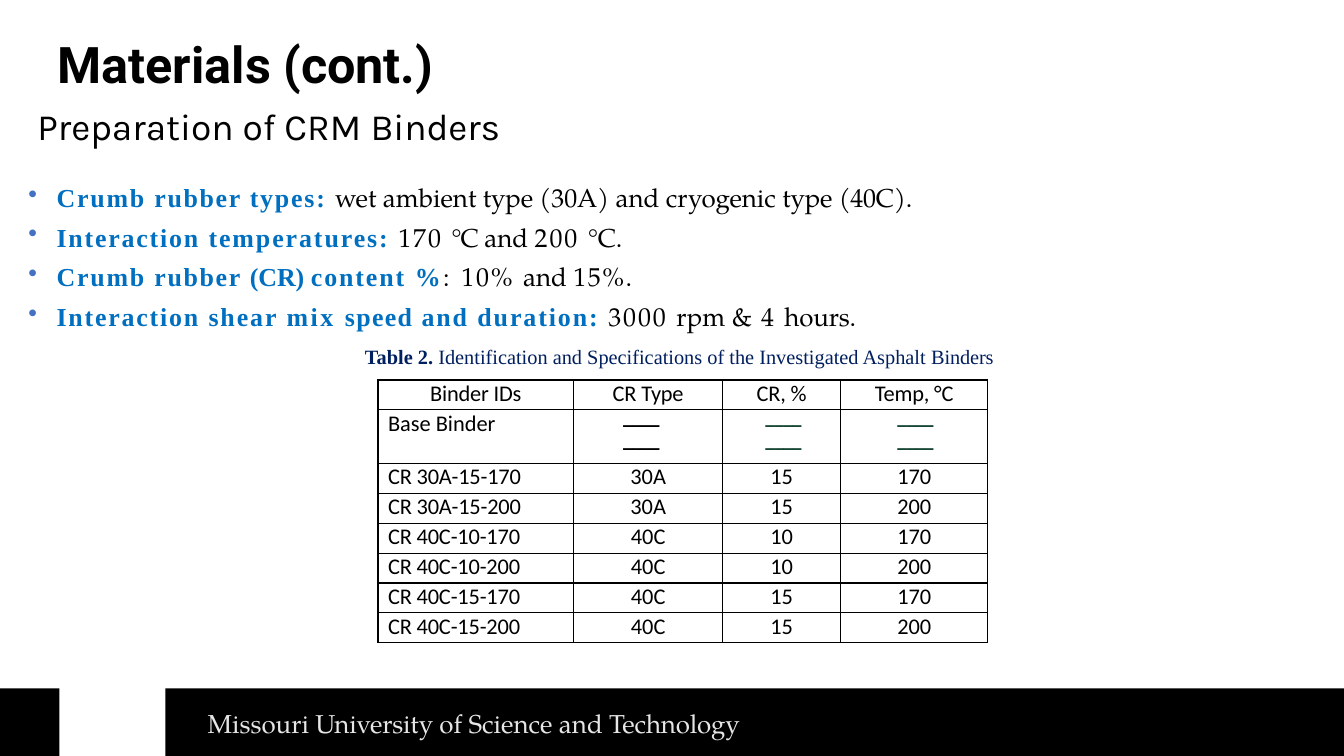
import pptx
import pptx.dml.color
import pptx.enum.shapes
import pptx.enum.text
import pptx.oxml.ns
import pptx.util
from lxml import etree

ALIGN = pptx.enum.text.PP_ALIGN
WIDTH, HEIGHT = pptx.util.Inches(13.33), pptx.util.Inches(7.5)

THEME = {
    "bar": "000000",
    "bullet": "4471C4",
    "rule": "000000",
    "title": {"name": "Roboto", "size": 36, "color": "000000", "bold": True},
    "footer": {"name": "TeX Gyre Pagella", "size": 18.5, "color": "E7E6E6", "bold": False},
    "heading": {"name": "Karla", "size": 26.5, "color": "000000", "bold": False},
    "label": {"name": "Times New Roman", "size": 18.5, "color": "006FC0", "bold": True},
    "value": {"name": "TeX Gyre Pagella", "size": 18.5, "color": "000000", "bold": False},
    "caption_label": {"name": "Times New Roman", "size": 14.5, "color": "001F5F", "bold": True},
    "caption": {"name": "Times New Roman", "size": 14.5, "color": "001F5F", "bold": False},
    "cell": {"name": "Calibri", "size": 16, "color": "000000", "bold": False},
    "dash": {"name": "Arial", "size": 16, "color": "000000", "bold": False},
    "green_dash": {"name": "Arial", "size": 16, "color": "154634", "bold": False},
}

# Each span is (style, text, letter spacing in points)
BULLETS = [
    [("label", "Crumb ", 1.3), ("label", "rubber ", 1.2), ("label", "types: ", 1.3),
     ("value", "wet ambient ", 0), ("value", "type ", -0.1),
     ("value", "(30A) and cryogenic ", 0), ("value", "type (40C).", -0.1)],
    [("label", "Interaction ", 1.3), ("label", "temperatures: ", 1.4),
     ("value", "170 ", 1.4), ("value", "°C ", -0.8), ("value", "and ", 0),
     ("value", "200 ", 1.4), ("value", "°C.", -0.2)],
    [("label", "Crumb ", 1.3), ("label", "rubber ", 1.2), ("label", "(CR) ", 0),
     ("label", "content ", 1.4), ("label", "%", 1.8), ("value", ": ", 1.8),
     ("value", "10% ", 1.4), ("value", "and ", 0), ("value", "15%.", 1.1)],
    [("label", "Interaction ", 1.3), ("label", "shear ", 1.4), ("label", "mix ", 1.8),
     ("label", "speed ", 1), ("label", "and duration: ", 1.4), ("value", "3000 ", 1.4),
     ("value", "rpm ", 0), ("value", "& ", 1), ("value", "4 ", 1.4), ("value", "hours.", -0.1)],
]

HEADERS = ["Binder IDs", "CR Type", "CR, %", "Temp, °C"]
BINDERS = [("30A", 15, 170), ("30A", 15, 200), ("40C", 10, 170),
           ("40C", 10, 200), ("40C", 15, 170), ("40C", 15, 200)]
DASH = "ــــــــ"
COLUMN_SHARES = [14.55, 11.1, 8.78, 10.94]
DASH_MARGINS = [(3.45, 4.73), (3, 2.93), (4.05, 4.05)]


def across(percent):
    return round(WIDTH * percent / 100)


def down(percent):
    return round(HEIGHT * percent / 100)


def rgb(code):
    return pptx.dml.color.RGBColor.from_string(code)


def set_values(target, values):
    for name, value in values.items():
        setattr(target, name, value)


def add_spans(para, spans):
    for style, text, spacing in spans:
        look = THEME[style]
        span = para.add_run()
        span.text = text
        set_values(span.font, {"name": look["name"], "bold": look["bold"],
                               "size": pptx.util.Pt(look["size"])})
        span.font.color.rgb = rgb(look["color"])
        if spacing:
            span.font._element.set("spc", str(round(spacing * 100)))


def set_indent(para, left, hanging=0):
    props = para._p.get_or_add_pPr()
    props.set("marL", str(across(left)))
    props.set("indent", str(-across(hanging)))
    return props


def add_bullet(para):
    props = set_indent(para, 2.18, 2.1)
    color = etree.SubElement(props, pptx.oxml.ns.qn("a:buClr"))
    etree.SubElement(color, pptx.oxml.ns.qn("a:srgbClr"), val=THEME["bullet"])
    etree.SubElement(props, pptx.oxml.ns.qn("a:buChar"), char="•")


def add_box(page, left, top, width, height, spans, indent=0):
    box = page.shapes.add_textbox(across(left), down(top), across(width), down(height))
    frame = box.text_frame
    set_values(frame, {"word_wrap": True, "margin_left": 0, "margin_right": 0,
                       "margin_top": pptx.util.Inches(0.02), "margin_bottom": 0})
    set_indent(frame.paragraphs[0], indent)
    add_spans(frame.paragraphs[0], spans)
    return frame


def add_bar(page, left, width):
    bar = page.shapes.add_shape(pptx.enum.shapes.MSO_SHAPE.RECTANGLE, across(left),
                                down(91.07), across(width), down(8.93))
    bar.shadow.inherit = False
    bar.fill.solid()
    bar.fill.fore_color.rgb = rgb(THEME["bar"])
    bar.line.fill.background()


def add_borders(cell):
    props = cell._tc.get_or_add_tcPr()
    for position, side in enumerate(["lnL", "lnR", "lnT", "lnB"]):
        line = etree.Element(pptx.oxml.ns.qn("a:" + side), w=str(pptx.util.Pt(1)))
        fill = etree.SubElement(line, pptx.oxml.ns.qn("a:solidFill"))
        etree.SubElement(fill, pptx.oxml.ns.qn("a:srgbClr"), val=THEME["rule"])
        props.insert(position, line)


def fill_cell(cell, text, style="cell", align=ALIGN.CENTER, left=0, right=0, spacing=0):
    set_values(cell, {"margin_left": across(left), "margin_right": across(right),
                      "margin_top": 0, "margin_bottom": 0})
    cell.fill.background()
    add_borders(cell)
    para = cell.text_frame.paragraphs[0]
    para.alignment = align
    add_spans(para, [(style, text, spacing)])


def add_binder_table(page):
    row_count = len(BINDERS) + 2
    table = page.shapes.add_table(row_count, len(HEADERS), across(28.13), down(50.27),
                                  across(sum(COLUMN_SHARES)), down(4 * row_count)).table
    set_values(table, {"first_row": False, "horz_banding": False})
    for column, share in zip(table.columns, COLUMN_SHARES):
        column.width = across(share)
    for row in table.rows:
        row.height = down(3.95)

    # Header and base binder
    for index, header in enumerate(HEADERS):
        fill_cell(table.cell(0, index), header, spacing=-0.1)
    fill_cell(table.cell(1, 0), "Base Binder", align=ALIGN.LEFT, left=0.75)
    for index, (left, right) in enumerate(DASH_MARGINS, 1):
        style = "dash" if index == 1 else "green_dash"
        fill_cell(table.cell(1, index), DASH, style, ALIGN.RIGHT, left, right)

    # Modified binders, each named after its own values
    for row, binder in enumerate(BINDERS, 2):
        name = "CR " + "-".join(map(str, binder))
        fill_cell(table.cell(row, 0), name, align=ALIGN.LEFT, left=0.75, spacing=-0.1)
        for index, value in enumerate(binder, 1):
            fill_cell(table.cell(row, index), str(value))


def main():
    deck = pptx.Presentation()
    set_values(deck, {"slide_width": WIDTH, "slide_height": HEIGHT})
    page = deck.slides.add_slide(deck.slide_layouts[6])

    # Footer bars
    add_bar(page, 0, 4.43)
    add_bar(page, 12.3, 87.7)

    # Title and footer
    add_box(page, 4.2, 4.13, 49.74, 8.4,
            [("title", "Materials ", 0), ("title", "(cont.)", -0.1)], 0.08)
    add_box(page, 15.38, 93.33, 40.51, 4.53,
            [("footer", "Missouri ", 0), ("footer", "University ", -0.1),
             ("footer", "of Science and ", 0), ("footer", "Technology", -0.1)], 0.08)

    # Heading, bullets and table caption
    body = add_box(page, 2.03, 13.47, 72.62, 35.47,
                   [("heading", "Preparation of CRM ", 0), ("heading", "Binders", -0.1)], 0.75)
    for index, spans in enumerate(BULLETS):
        para = body.add_paragraph()
        para.space_before = pptx.util.Pt(6.2 if index else 23.6)
        add_bullet(para)
        add_spans(para, spans)
    caption = body.add_paragraph()
    caption.space_before = pptx.util.Pt(8.9)
    set_indent(caption, 25.13)
    add_spans(caption, [
        ("caption_label", "Table 2. ", 0),
        ("caption", "Identification and Specifications of the Investigated Asphalt ", 0),
        ("caption", "Binders", -0.1)])

    add_binder_table(page)
    deck.save("out.pptx")


if __name__ == "__main__":
    main()
